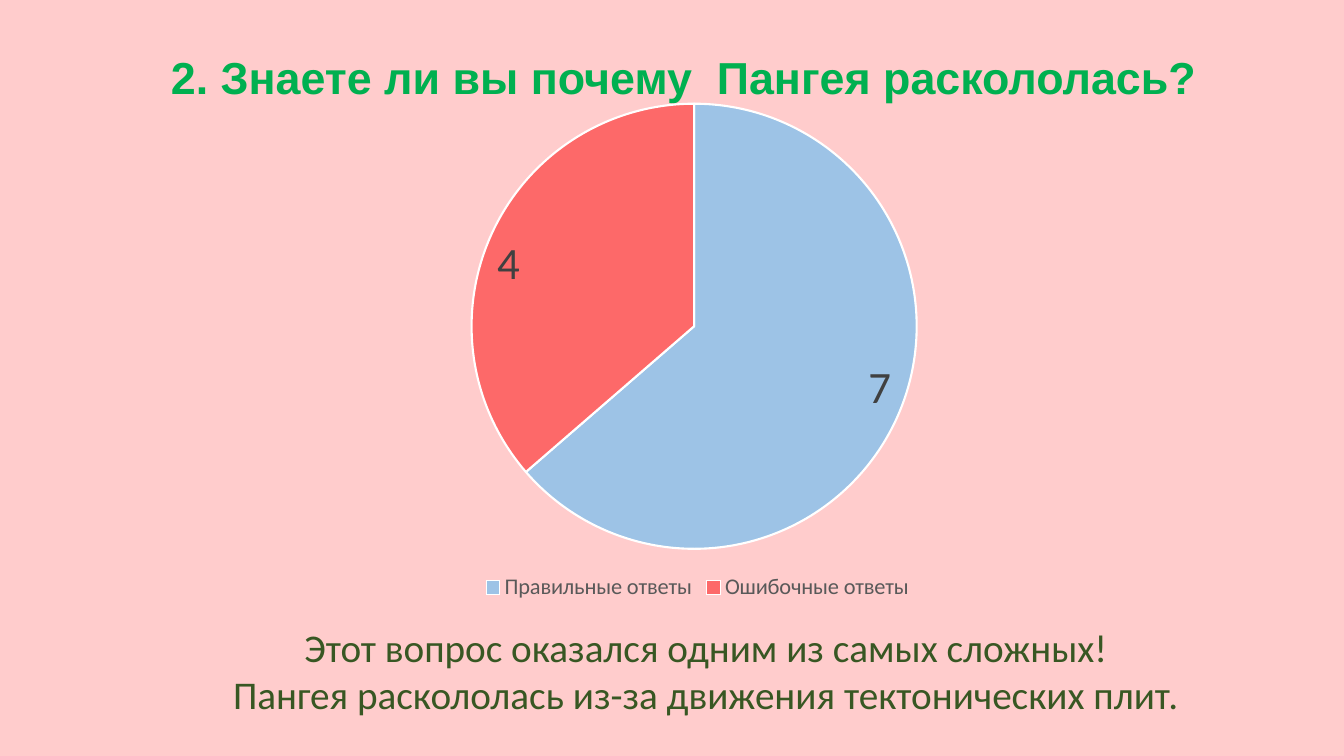
from lxml import etree
from pptx import Presentation
from pptx.chart.data import CategoryChartData
from pptx.dml.color import RGBColor
from pptx.enum.chart import XL_CHART_TYPE, XL_LABEL_POSITION, XL_LEGEND_POSITION
from pptx.enum.text import MSO_AUTO_SIZE, PP_ALIGN
from pptx.oxml.ns import qn
from pptx.util import Pt

PX = 9525
PIE = XL_CHART_TYPE.PIE
INSIDE_END = XL_LABEL_POSITION.INSIDE_END
BOTTOM = XL_LEGEND_POSITION.BOTTOM
GROW = MSO_AUTO_SIZE.SHAPE_TO_FIT_TEXT
CENTER = PP_ALIGN.CENTER

PINK = RGBColor(0xFF, 0xCC, 0xCC)
GREEN = RGBColor(0x00, 0xB0, 0x50)
DARK_GREEN = RGBColor(0x38, 0x57, 0x23)
BLUE = RGBColor(0x9D, 0xC3, 0xE6)
RED = RGBColor(0xFD, 0x69, 0x69)
WHITE = RGBColor(0xFF, 0xFF, 0xFF)
LABEL_GRAY = RGBColor(0x40, 0x40, 0x40)
LEGEND_GRAY = RGBColor(0x59, 0x59, 0x59)

TITLE = "2. Знаете ли вы почему  Пангея раскололась?"
CAPTION = [
    "Этот вопрос оказался одним из самых сложных!",
    "Пангея раскололась из-за движения тектонических плит.",
]
ANSWERS = [("Правильные ответы", 7, BLUE), ("Ошибочные ответы", 4, RED)]
PIE_AREA = {"x": 0.18, "y": 0.03, "w": 0.63, "h": 0.86}


def scaled(*lengths):
    """Turn px lengths into EMU."""
    return [length * PX for length in lengths]


def style_font(font, name, size, color, bold=False):
    """Set the face, size, colour and weight of a font."""
    font.name = name
    font.size = Pt(size)
    font.color.rgb = color
    font.bold = bold


def add_text(page, place, lines, wrap, *style):
    """Add a centred text box with one paragraph per line."""
    frame = page.shapes.add_textbox(*scaled(*place)).text_frame
    frame.word_wrap = wrap
    frame.auto_size = GROW
    frame.text = "\n".join(lines)
    for para in frame.paragraphs:
        para.alignment = CENTER
        for span in para.runs:
            style_font(span.font, *style)


def fix_pie_area(chart):
    """Pin the pie to a fixed part of the chart frame."""
    plot_area = chart.element.find(".//" + qn("c:plotArea"))
    layout = plot_area.find(qn("c:layout"))
    if layout is None:
        layout = etree.Element(qn("c:layout"))
        plot_area.insert(0, layout)
    manual = etree.SubElement(layout, qn("c:manualLayout"))
    settings = {"layoutTarget": "inner", "xMode": "edge", "yMode": "edge", **PIE_AREA}
    for name, value in settings.items():
        etree.SubElement(manual, qn("c:" + name)).set("val", str(value))


def add_pie(page, place, answers):
    """Add a pie of answer counts with value labels and a legend."""
    data = CategoryChartData()
    data.categories = [name for name, _, _ in answers]
    data.add_series("Series 1", [count for _, count, _ in answers])
    chart = page.shapes.add_chart(PIE, *scaled(*place), data).chart
    chart.has_title = False
    chart.font.name = "Calibri"
    chart.font.size = Pt(10)
    chart.has_legend = True
    chart.legend.position = BOTTOM
    chart.legend.include_in_layout = False
    style_font(chart.legend.font, "Calibri", 16, LEGEND_GRAY)

    plot = chart.plots[0]
    plot.vary_by_categories = True
    for index, (_, _, color) in enumerate(answers):
        slice_format = plot.series[0].points[index].format
        slice_format.fill.solid()
        slice_format.fill.fore_color.rgb = color
        slice_format.line.color.rgb = WHITE
        slice_format.line.width = Pt(1.5)
    labels = plot.series[0].data_labels
    labels.show_value = True
    labels.position = INSIDE_END
    style_font(labels.font, "Calibri", 32, LABEL_GRAY)
    fix_pie_area(chart)


def main():
    """Build the quiz result slide."""
    deck = Presentation()
    deck.slide_width, deck.slide_height = scaled(1280, 720)
    page = deck.slides.add_slide(deck.slide_layouts[6])
    page.background.fill.solid()
    page.background.fill.fore_color.rgb = PINK
    add_text(page, (51, 43, 1201, 61), [TITLE], True, "Arial", 32, GREEN, True)
    add_pie(page, (328, 84, 673, 493), ANSWERS)
    add_text(page, (211, 589, 922, 100), CAPTION, False, "Calibri", 28, DARK_GREEN)
    deck.save("out.pptx")


if __name__ == "__main__":
    main()
